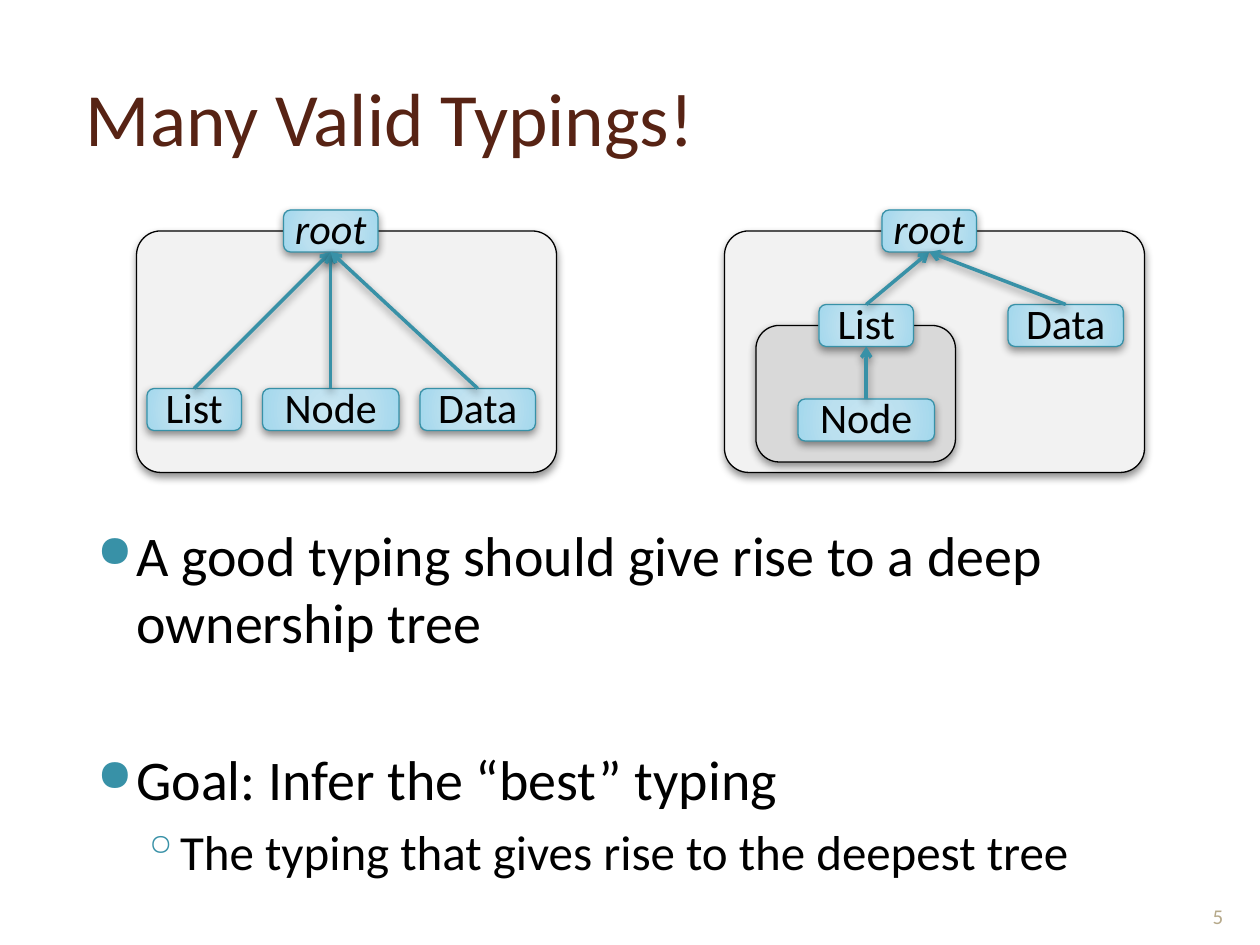
from dataclasses import dataclass

from lxml import etree
from pptx import Presentation
from pptx.dml.color import RGBColor
from pptx.enum.shapes import MSO_CONNECTOR, MSO_SHAPE
from pptx.enum.text import MSO_ANCHOR, PP_ALIGN
from pptx.oxml import parse_xml
from pptx.oxml.ns import nsdecls, qn
from pptx.util import Pt

FONT = "Calibri"
TEAL = "3891A7"
BLACK = "000000"
NODE_HEIGHT = 24
NODE_STOPS = ((0, "C9E6F2"), (50, "BBE0EF"), (97, "A4D8ED"), (100, "9BD7EE"))


@dataclass(frozen=True)
class Frame:
    left: float
    top: float
    width: float
    height: float
    fill: str
    corner: float


@dataclass(frozen=True)
class Node:
    label: str
    left: float
    top: float
    width: float
    owner: "Node | None" = None

    @property
    def center(self) -> float:
        return self.left + self.width / 2

    @property
    def bottom(self) -> float:
        return self.top + NODE_HEIGHT


@dataclass(frozen=True)
class Bullet:
    text: str
    size: float
    symbol: str
    symbol_percent: int
    margin: float
    hanging: float
    space_before: float


def color(value: str) -> RGBColor:
    return RGBColor.from_string(value)


def add_shadow(shape) -> None:
    shape._element.spPr.append(parse_xml(
        f'<a:effectLst {nsdecls("a")}><a:outerShdw blurRad="{Pt(5)}" dist="{Pt(2)}" '
        f'dir="5400000" rotWithShape="0"><a:srgbClr val="{BLACK}">'
        '<a:alpha val="43000"/></a:srgbClr></a:outerShdw></a:effectLst>'))


def set_line(shape, value: str, width: float) -> None:
    shape.line.color.rgb = color(value)
    shape.line.width = Pt(width)


def fill_radial(shape) -> None:
    """Fill with the node gradient, spreading from the middle."""
    stops = "".join(f'<a:gs pos="{position * 1000}"><a:srgbClr val="{value}"/></a:gs>'
                    for position, value in NODE_STOPS)
    gradient = parse_xml(
        f'<a:gradFill {nsdecls("a")} rotWithShape="1"><a:gsLst>{stops}</a:gsLst>'
        '<a:path path="circle"><a:fillToRect l="50000" t="50000" r="50000" b="50000"/>'
        '</a:path></a:gradFill>')
    shape._element.spPr.find(qn("a:prstGeom")).addnext(gradient)


def format_runs(paragraph, size: float, value: str, italic: bool = False) -> None:
    for run in paragraph.runs:
        run.font.name = FONT
        run.font.size = Pt(size)
        run.font.italic = italic
        run.font.color.rgb = color(value)


def add_rounded(slide, left: float, top: float, width: float, height: float):
    return slide.shapes.add_shape(
        MSO_SHAPE.ROUNDED_RECTANGLE, Pt(left), Pt(top), Pt(width), Pt(height))


def add_text(slide, left: float, top: float, width: float, height: float,
             anchor: MSO_ANCHOR):
    box = slide.shapes.add_textbox(Pt(left), Pt(top), Pt(width), Pt(height))
    box.text_frame.word_wrap = True
    box.text_frame.vertical_anchor = anchor
    return box.text_frame


def draw_frame(slide, frame: Frame) -> None:
    shape = add_rounded(slide, frame.left, frame.top, frame.width, frame.height)
    shape.adjustments[0] = frame.corner
    shape.fill.solid()
    shape.fill.fore_color.rgb = color(frame.fill)
    set_line(shape, BLACK, 0.75)
    add_shadow(shape)


def draw_node(slide, node: Node) -> None:
    shape = add_rounded(slide, node.left, node.top, node.width, NODE_HEIGHT)
    fill_radial(shape)
    set_line(shape, TEAL, 0.75)
    add_shadow(shape)
    frame = shape.text_frame
    frame.margin_left = frame.margin_right = frame.margin_top = frame.margin_bottom = 0
    frame.vertical_anchor = MSO_ANCHOR.BOTTOM
    frame.text = node.label
    paragraph = frame.paragraphs[0]
    paragraph.alignment = PP_ALIGN.CENTER
    paragraph.line_spacing = 0.5
    format_runs(paragraph, 24, BLACK, italic=node.owner is None)


def draw_arrow(slide, node: Node) -> None:
    """Point from a node to its owner."""
    connector = slide.shapes.add_connector(
        MSO_CONNECTOR.STRAIGHT, Pt(node.center), Pt(node.top),
        Pt(node.owner.center), Pt(node.owner.bottom))
    set_line(connector, TEAL, 2)
    line = connector._element.spPr.find(qn("a:ln"))
    etree.SubElement(line, qn("a:tailEnd"), type="arrow")
    add_shadow(connector)


def draw_tree(slide, frames: list[Frame], nodes: list[Node]) -> None:
    for frame in frames:
        draw_frame(slide, frame)
    for node in nodes:
        draw_node(slide, node)
    for node in nodes:
        if node.owner:
            draw_arrow(slide, node)


def format_bullet(paragraph, bullet: Bullet) -> None:
    paragraph.space_before = Pt(bullet.space_before)
    format_runs(paragraph, bullet.size, BLACK)
    properties = paragraph._p.get_or_add_pPr()
    properties.set("marL", str(Pt(bullet.margin)))
    properties.set("indent", str(Pt(-bullet.hanging)))
    symbol_color = etree.SubElement(properties, qn("a:buClr"))
    etree.SubElement(symbol_color, qn("a:srgbClr"), val=TEAL)
    etree.SubElement(properties, qn("a:buSzPct"), val=str(bullet.symbol_percent * 1000))
    etree.SubElement(properties, qn("a:buChar"), char=bullet.symbol)


def main() -> None:
    presentation = Presentation()
    presentation.slide_width, presentation.slide_height = Pt(720), Pt(540)
    slide = presentation.slides.add_slide(presentation.slide_layouts[6])

    title = add_text(slide, 42, 21.6, 638.6, 90, MSO_ANCHOR.MIDDLE)
    title.text = "Many Valid Typings!"
    format_runs(title.paragraphs[0], 43, "572314")

    bullets = [
        Bullet("A good typing should give rise to a deep ownership tree",
               32, "●", 80, 28.8, 22.3, 0),
        Bullet("Goal: Infer the “best” typing", 32, "●", 80, 28.8, 22.3, 51),
        Bullet("The typing that gives rise to the deepest tree",
               28, "◦", 100, 50.4, 18.7, 5.5),
    ]
    body = add_text(slide, 42, 294, 638.6, 222, MSO_ANCHOR.TOP)
    body.text = "\n".join(bullet.text for bullet in bullets)
    for paragraph, bullet in zip(body.paragraphs, bullets):
        format_bullet(paragraph, bullet)

    flat_root = Node("root", 162, 120, 54)
    draw_tree(slide, [Frame(78, 132, 240, 138, "F2F2F2", 0.1)], [
        flat_root,
        Node("List", 84, 222, 54, flat_root),
        Node("Node", 150, 222, 78, flat_root),
        Node("Data", 240, 222, 66, flat_root),
    ])

    deep_root = Node("root", 504, 120, 54)
    deep_list = Node("List", 468, 174, 54, deep_root)
    draw_tree(slide, [Frame(414, 132, 240, 138, "F2F2F2", 0.1),
                      Frame(432, 186, 114, 78, "D9D9D9", 0.17)], [
        deep_root,
        deep_list,
        Node("Node", 456, 228, 78, deep_list),
        Node("Data", 576, 174, 66, deep_root),
    ])

    number = add_text(slide, 678, 497, 36, 37.4, MSO_ANCHOR.BOTTOM)
    number.text = "5"
    number.paragraphs[0].alignment = PP_ALIGN.CENTER
    format_runs(number.paragraphs[0], 12, "B6A98A")

    presentation.save("out.pptx")


if __name__ == "__main__":
    main()
